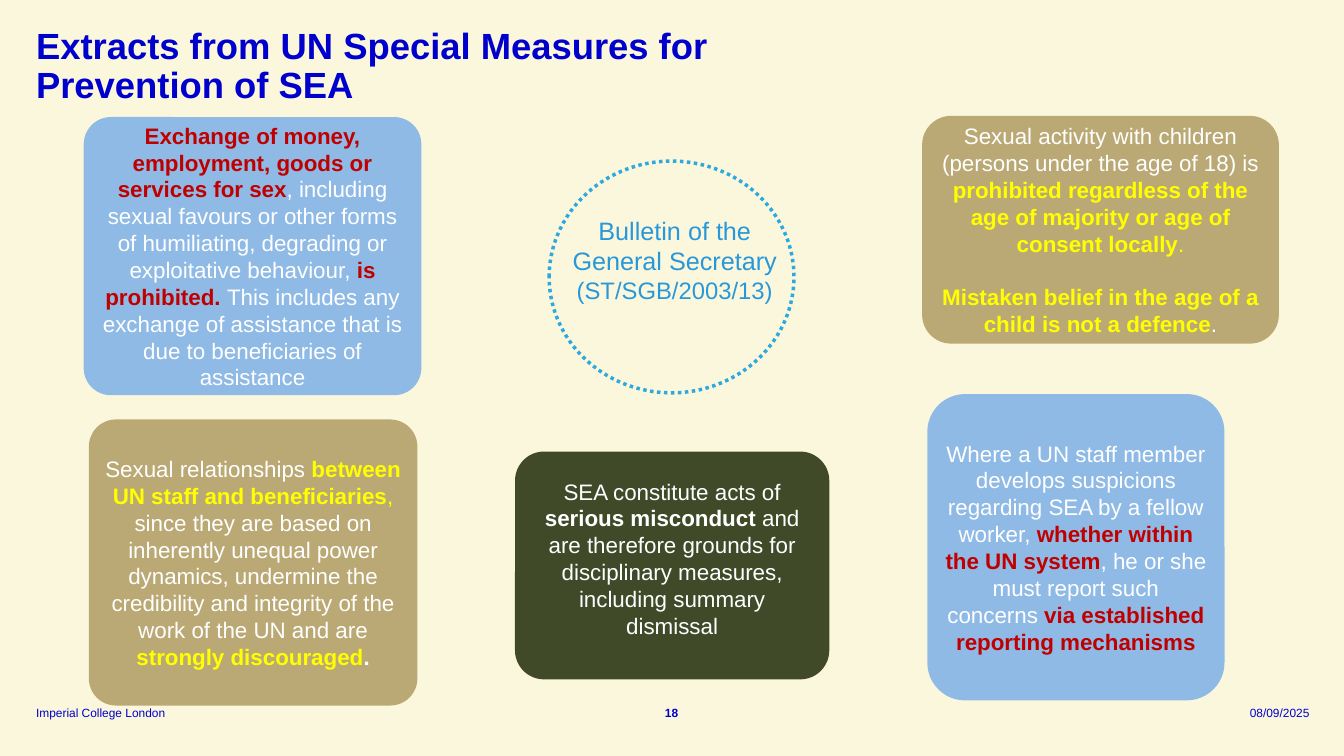
from typing import NamedTuple

import pptx
import pptx.dml.color
import pptx.enum.dml
import pptx.enum.shapes
import pptx.enum.text
import pptx.shapes.shapetree
import pptx.text.text
import pptx.util

Cm = pptx.util.Cm
Pt = pptx.util.Pt
Align = pptx.enum.text.PP_ALIGN
Anchor = pptx.enum.text.MSO_ANCHOR
Shape = pptx.enum.shapes.MSO_SHAPE
Tree = pptx.shapes.shapetree.SlideShapes
Frame = pptx.text.text.TextFrame

CREAM = "FBF7DC"
NAVY = "0000CD"
SKY = "8EBAE5"
SAND = "BBA975"
OLIVE = "404A29"
CYAN = "2EA9E0"
AZURE = "2898D9"
WHITE = "FFFFFF"
RED = "C00000"
YELLOW = "FFFF00"


class Box(NamedTuple):
    left: float
    top: float
    width: float
    height: float


class Run(NamedTuple):
    text: str
    color: str = WHITE
    bold: bool = False


class Card(NamedTuple):
    box: Box
    fill: str
    round: float
    paras: list[list[Run]]
    gap: float = 0
    foot: float = 0.1


class Label(NamedTuple):
    box: Box
    text: str
    size: float
    align: Align
    anchor: Anchor
    bold: bool = False
    space: float = 1.0


CARDS = [
    Card(Box(2.11, 2.95, 8.51, 7.01), SKY, 0.098, [[
        Run("Exchange of money, employment, goods or services for sex", RED, True),
        Run(", including sexual favours or other forms of humiliating, "
            "degrading or exploitative behaviour, "),
        Run("is prohibited. ", RED, True),
        Run("This includes any exchange of assistance that is due to "
            "beneficiaries of assistance"),
    ]]),
    Card(Box(2.24, 10.57, 8.28, 7.21), SAND, 0.095, [[
        Run("Sexual relationships "),
        Run("between UN staff and beneficiaries", YELLOW, True),
        Run(", ", YELLOW),
        Run("since they are based on inherently unequal power dynamics, "
            "undermine the credibility and integrity of the work of the UN "
            "and are "),
        Run("strongly discouraged", YELLOW, True),
        Run(".", WHITE, True),
    ]]),
    Card(Box(23.24, 2.92, 8.99, 5.74), SAND, 0.127, [
        [
            Run("Sexual activity with children (persons under the age of 18) is "),
            Run("prohibited regardless of the age of majority or age of "
                "consent locally", YELLOW, True),
            Run(".", YELLOW),
        ],
        [
            Run("Mistaken belief in the age of a child is not a defence",
                YELLOW, True),
            Run("."),
        ],
    ], gap=19),
    Card(Box(23.37, 9.93, 7.49, 7.72), SKY, 0.127, [[
        Run("Where a UN staff member develops suspicions regarding SEA by a "
            "fellow worker, "),
        Run("whether within the UN system", RED, True),
        Run(", he or she must report such concerns "),
        Run("via established reporting mechanisms", RED, True),
    ]]),
    Card(Box(12.98, 11.38, 7.92, 5.74), OLIVE, 0.127, [[
        Run("SEA constitute acts of "),
        Run("serious misconduct ", WHITE, True),
        Run("and are therefore grounds for disciplinary measures, including "
            "summary dismissal"),
    ]], foot=0.46),
]

LABELS = [
    Label(Box(0.91, 0.71, 32.05, 1.04),
          "Extracts from UN Special Measures for\nPrevention of SEA",
          26, Align.LEFT, Anchor.TOP, True, 0.9),
    Label(Box(0.91, 17.75, 3.94, 0.38), "Imperial College London",
          8.5, Align.LEFT, Anchor.BOTTOM),
    Label(Box(16.48, 17.75, 0.89, 0.38), "18",
          8.5, Align.CENTER, Anchor.BOTTOM, True),
    Label(Box(29.57, 17.75, 3.43, 0.38), "08/09/2025",
          8.5, Align.RIGHT, Anchor.BOTTOM),
]

RING = Box(13.84, 4.06, 6.17, 5.84)
CENTRE = Box(13.92, 5.41, 6.17, 2.26)
SOURCE = [("Bulletin of the General Secretary", 18), ("(ST/SGB/2003/13)", 17)]


def tint(code: str) -> pptx.dml.color.RGBColor:
    return pptx.dml.color.RGBColor.from_string(code)


def place(box: Box) -> list[pptx.util.Length]:
    return [Cm(side) for side in box]


def set_up(frame: Frame, anchor: Anchor, side: float, head: float, foot: float) -> None:
    frame.word_wrap = True
    frame.vertical_anchor = anchor
    frame.margin_left = frame.margin_right = Cm(side)
    frame.margin_top = Cm(head)
    frame.margin_bottom = Cm(foot)


def next_para(frame: Frame, index: int, size: float, align: Align):
    para = frame.add_paragraph() if index else frame.paragraphs[0]
    para.alignment = align
    para.font.name = "Arial"
    para.font.size = Pt(size)
    return para


def draw_card(shapes: Tree, card: Card) -> None:
    shape = shapes.add_shape(Shape.ROUNDED_RECTANGLE, *place(card.box))
    shape.adjustments[0] = card.round
    shape.shadow.inherit = False
    shape.fill.solid()
    shape.fill.fore_color.rgb = tint(card.fill)
    shape.line.fill.background()
    set_up(shape.text_frame, Anchor.MIDDLE, 0.18, 0.1, card.foot)
    for index, runs in enumerate(card.paras):
        para = next_para(shape.text_frame, index, 16, Align.CENTER)
        if index:
            para.space_before = Pt(card.gap)
        for item in runs:
            run = para.add_run()
            run.text = item.text
            run.font.bold = item.bold
            run.font.color.rgb = tint(item.color)


def draw_label(shapes: Tree, label: Label) -> None:
    frame = shapes.add_textbox(*place(label.box)).text_frame
    set_up(frame, label.anchor, 0, 0, 0)
    para = next_para(frame, 0, label.size, label.align)
    para.text = label.text
    para.line_spacing = label.space
    para.font.bold = label.bold
    para.font.color.rgb = tint(NAVY)


def draw_centre(shapes: Tree) -> None:
    frame = shapes.add_textbox(*place(CENTRE)).text_frame
    set_up(frame, Anchor.MIDDLE, 0.18, 0.1, 0.1)
    for index, (text, size) in enumerate(SOURCE):
        para = next_para(frame, index, size, Align.CENTER)
        para.text = text
        para.font.color.rgb = tint(AZURE)
    ring = shapes.add_shape(Shape.FLOWCHART_CONNECTOR, *place(RING))
    ring.shadow.inherit = False
    ring.fill.background()
    ring.line.color.rgb = tint(CYAN)
    ring.line.width = Pt(2.5)
    ring.line.dash_style = pptx.enum.dml.MSO_LINE.ROUND_DOT


def main() -> None:
    deck = pptx.Presentation()
    deck.slide_width = Cm(33.87)
    deck.slide_height = Cm(19.05)
    slide = deck.slides.add_slide(deck.slide_layouts[6])
    slide.background.fill.solid()
    slide.background.fill.fore_color.rgb = tint(CREAM)
    for label in LABELS:
        draw_label(slide.shapes, label)
    draw_centre(slide.shapes)
    for card in CARDS:
        draw_card(slide.shapes, card)
    deck.save("out.pptx")


if __name__ == "__main__":
    main()
